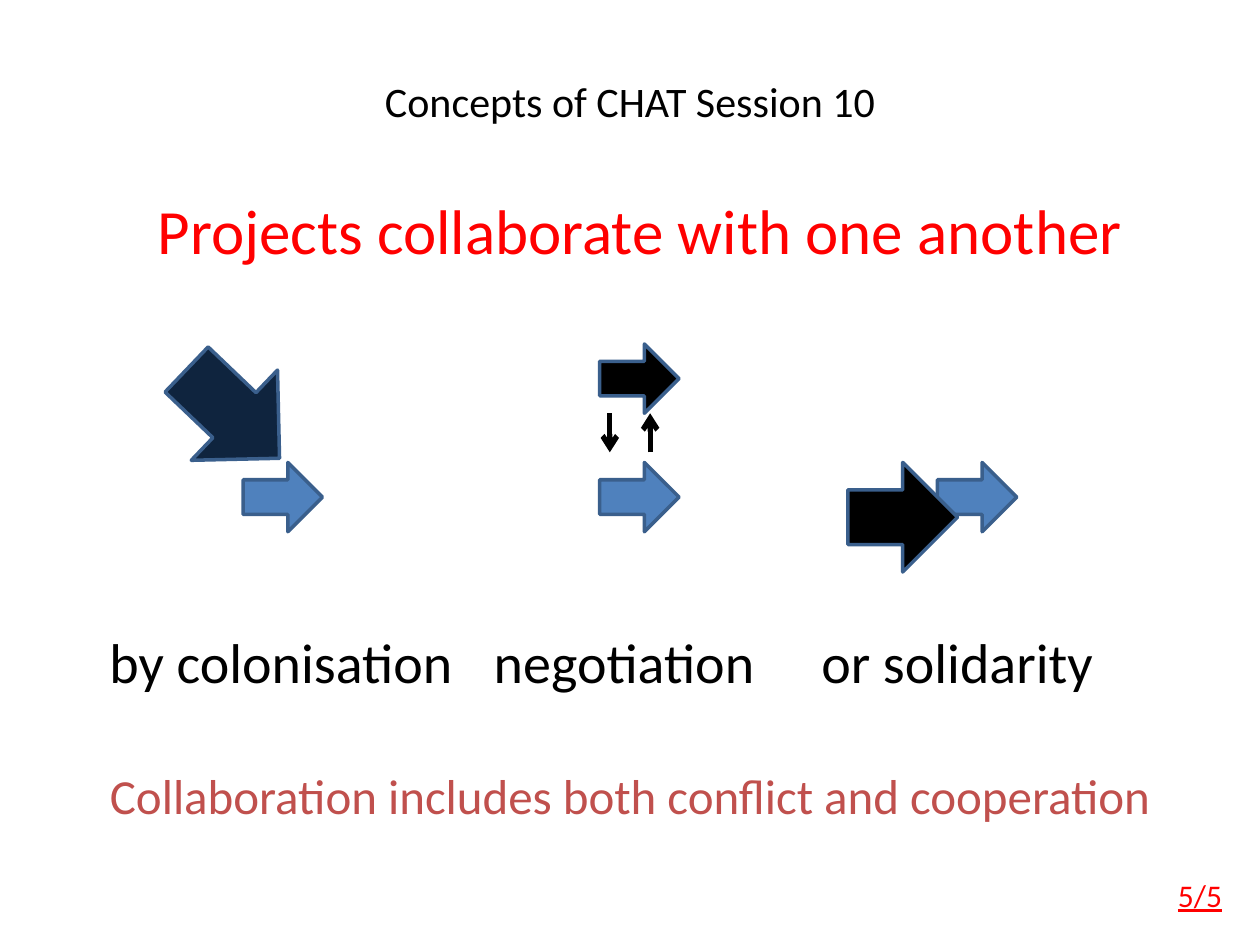
from dataclasses import dataclass

from lxml import etree
from pptx import Presentation
from pptx.dml.color import RGBColor
from pptx.enum.shapes import MSO_CONNECTOR, MSO_SHAPE
from pptx.enum.text import MSO_ANCHOR, MSO_AUTO_SIZE, PP_ALIGN
from pptx.oxml.ns import qn
from pptx.util import Inches, Pt

LEFT, CENTER = PP_ALIGN.LEFT, PP_ALIGN.CENTER
TOP, MIDDLE = MSO_ANCHOR.TOP, MSO_ANCHOR.MIDDLE
RIGHT_ARROW = MSO_SHAPE.RIGHT_ARROW
STRAIGHT = MSO_CONNECTOR.STRAIGHT


@dataclass(frozen=True)
class Theme:
    font: str = "Calibri"
    black: str = "000000"
    red: str = "FF0000"
    brick: str = "C0504D"
    blue: str = "4F81BD"
    navy: str = "0F243E"
    outline: str = "3A5F8C"
    title: int = 24
    heading: int = 36
    label: int = 32
    closing: int = 28
    page: int = 18


THEME = Theme()

# Content
TITLE = "Concepts of CHAT Session 10"
HEADING = "Projects collaborate with one another"
CLOSING = "Collaboration includes both conflict and cooperation"
PAGE = "5/5"
# Label, label left, label width, left of the small blue project
MODES = [
    (" by colonisation", 0.67, 3.07, 1.93),
    ("negotiation", 3.82, 2.52, 4.76),
    ("or solidarity", 6.42, 2.52, 7.44),
]

# Layout in inches
SLIDE_W, SLIDE_H = 10, 7.5
MARGIN = 0.75
BODY_W = SLIDE_W - 2 * MARGIN
PROJECT_W, PROJECT_H = 0.63, 0.55
PROJECT_Y, PARTNER_Y = 3.67, 2.73
LABEL_Y, LABEL_H = 4.93, 0.64
NEGOTIATION_X = MODES[1][3]
EXCHANGE_TOP, EXCHANGE_BOTTOM = PARTNER_Y + PROJECT_H, 3.59

# Other projects: left, top, width, height, rotation, fill
OTHERS = [
    (1.34, 2.79, 1.02, 0.99, 43.7, THEME.navy),
    (NEGOTIATION_X, PARTNER_Y, PROJECT_W, PROJECT_H, 0, THEME.black),
    (6.73, PROJECT_Y, 0.87, 0.87, 0, THEME.black),
]
# Exchange between negotiating projects: x, start, end
EXCHANGES = [
    (NEGOTIATION_X + 0.08, EXCHANGE_TOP, EXCHANGE_BOTTOM),
    (NEGOTIATION_X + 0.40, EXCHANGE_BOTTOM, EXCHANGE_TOP),
]


def rgb(value):
    return RGBColor.from_string(value)


def write(sp, text, size, color, align=LEFT, anchor=TOP, underline=None):
    tf = sp.text_frame
    tf.text = text
    tf.word_wrap = True
    tf.auto_size = MSO_AUTO_SIZE.NONE
    tf.vertical_anchor = anchor
    p = tf.paragraphs[0]
    p.alignment = align
    font = p.runs[0].font
    font.name, font.size, font.underline = THEME.font, Pt(size), underline
    font.color.rgb = rgb(color)
    return p


def add_text(slide, box, *args, **style):
    return write(slide.shapes.add_textbox(*map(Inches, box)), *args, **style)


def add_project(slide, x, y, w, h, rotation, fill):
    sp = slide.shapes.add_shape(RIGHT_ARROW, *map(Inches, (x, y, w, h)))
    sp.shadow.inherit = False
    sp.rotation = rotation
    sp.fill.solid()
    sp.fill.fore_color.rgb = rgb(fill)
    sp.line.color.rgb = rgb(THEME.outline)
    sp.line.width = Pt(2)


def add_exchange(slide, x, start, end):
    line = slide.shapes.add_connector(STRAIGHT, *map(Inches, (x, start, x, end)))
    line.line.color.rgb = rgb(THEME.black)
    line.line.width = Pt(3)
    ln = line.line._get_or_add_ln()
    etree.SubElement(ln, qn("a:tailEnd")).set("type", "arrow")
    etree.SubElement(line._element.spPr, qn("a:effectLst"))


def main():
    prs = Presentation()
    prs.slide_width, prs.slide_height = Inches(SLIDE_W), Inches(SLIDE_H)
    slide = prs.slides.add_slide(prs.slide_layouts[5])

    # Title and heading
    title = slide.shapes.title
    title.left, title.top, title.width, title.height = map(
        Inches, (MARGIN, 0.29, BODY_W, 1.02))
    write(title, TITLE, THEME.title, THEME.black, CENTER, MIDDLE)
    p = add_text(slide, (0.83, 1.47, BODY_W, 0.87), HEADING,
                 THEME.heading, THEME.red, CENTER)
    p.space_before = Pt(0.2 * THEME.heading)

    # Three modes of collaboration
    for label, x, w, project_x in MODES:
        add_project(slide, project_x, PROJECT_Y, PROJECT_W, PROJECT_H, 0, THEME.blue)
        add_text(slide, (x, LABEL_Y, w, LABEL_H), label, THEME.label, THEME.black)
    for other in OTHERS:
        add_project(slide, *other)
    for exchange in EXCHANGES:
        add_exchange(slide, *exchange)

    # Closing line and page number
    p = add_text(slide, (MARGIN, 6.03, BODY_W, 0.87), CLOSING,
                 THEME.closing, THEME.brick, CENTER)
    p.space_before = Pt(0.2 * THEME.closing)
    add_text(slide, (9.25, 6.9, 0.55, 0.4), PAGE, THEME.page, THEME.red,
             underline=True)

    prs.save("out.pptx")


if __name__ == "__main__":
    main()
